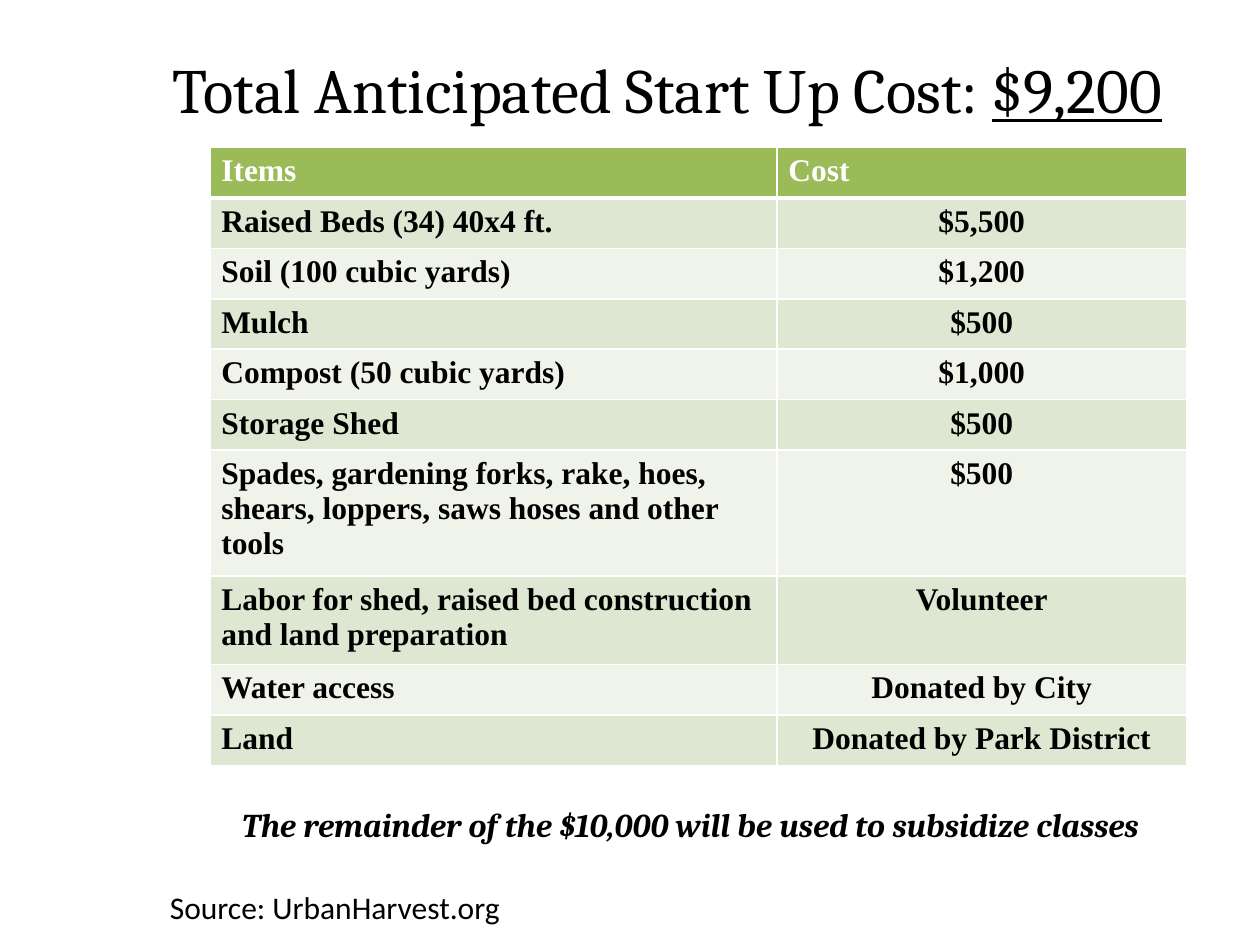
"""Build a slide with a table of start-up costs."""
import pptx
import pptx.dml.color
import pptx.enum.text
import pptx.oxml
import pptx.oxml.ns
import pptx.util

SLIDE_WIDTH, SLIDE_HEIGHT = 10, 7.5
COLORS = {"text": "000000", "header": "9BBB59", "white": "FFFFFF",
          "odd": "DEE7D1", "even": "EFF3EA"}
TITLE = [("Total Anticipated Start Up Cost: ", False), ("$9,200", True)]
HEADER = ("Items", "Cost")
COSTS = [
    ("Raised Beds (34) 40x4 ft.", "$5,500"),
    ("Soil (100 cubic yards)", "$1,200"),
    ("Mulch", "$500"),
    ("Compost (50 cubic yards)", "$1,000"),
    ("Storage Shed", "$500"),
    ("Spades, gardening forks, rake, hoes, shears, loppers, saws hoses and other tools", "$500"),
    ("Labor for shed, raised bed construction and land preparation", "Volunteer"),
    ("Water access", "Donated by City"),
    ("Land", "Donated by Park District"),
]
REMAINDER = "The remainder of the $10,000 will be used to subsidize classes"
SOURCE = "Source: UrbanHarvest.org"
COLUMN_WIDTHS = (4.5, 3.25)
ROW_HEIGHT = 0.4
TALL_ROWS = {6: 0.75, 7: 0.7}
TABLE_LEFT, TABLE_TOP, TABLE_HEIGHT = SLIDE_WIDTH / 6, 1.17, 4.87
TABLE_WIDTH = sum(COLUMN_WIDTHS)
ALIGN = pptx.enum.text.PP_ALIGN


def color(name):
    return pptx.dml.color.RGBColor.from_string(COLORS[name])


def inches(*values):
    return [pptx.util.Inches(value) for value in values]


def write(paragraph, text, *, font, size=18, fill="text", bold=False,
          italic=False, underline=None, align=None):
    paragraph.alignment = align
    run = paragraph.add_run()
    run.text = text
    run.font.name = font
    run.font.size = pptx.util.Pt(size)
    run.font.bold = bold
    run.font.italic = italic
    run.font.underline = underline
    run.font.color.rgb = color(fill)


def add_text(slide, box, text, **style):
    shape = slide.shapes.add_textbox(*inches(*box))
    shape.text_frame.word_wrap = True
    shape.text_frame.auto_size = pptx.enum.text.MSO_AUTO_SIZE.SHAPE_TO_FIT_TEXT
    write(shape.text_frame.paragraphs[0], text, **style)
    return shape


def format_cell(cell, fill, bottom):
    properties = cell._tc.get_or_add_tcPr()
    for side, width in (("L", 1), ("R", 1), ("T", 1), ("B", bottom)):
        properties.append(pptx.oxml.parse_xml(
            f'<a:ln{side} {pptx.oxml.ns.nsdecls("a")} w="{pptx.util.Pt(width)}">'
            f'<a:solidFill><a:srgbClr val="{COLORS["white"]}"/></a:solidFill></a:ln{side}>'))
    cell.fill.solid()
    cell.fill.fore_color.rgb = color(fill)
    cell.margin_left, cell.margin_right, cell.margin_top, cell.margin_bottom = inches(
        0.09, 0.09, 0.05, 0.05)


def add_title(slide):
    title = slide.shapes.title
    title.left, title.top, title.width, title.height = inches(0.92, 0.08, 8.75, 1.25)
    title.text_frame.vertical_anchor = pptx.enum.text.MSO_ANCHOR.MIDDLE
    for text, underline in TITLE:
        write(title.text_frame.paragraphs[0], text, font="Cambria", size=36,
              underline=underline, align=ALIGN.CENTER)


def add_cost_table(slide):
    rows = [HEADER, *COSTS]
    box = inches(TABLE_LEFT, TABLE_TOP, TABLE_WIDTH, TABLE_HEIGHT)
    table = slide.shapes.add_table(len(rows), len(HEADER), *box).table
    for column, width in zip(table.columns, COLUMN_WIDTHS):
        column.width = pptx.util.Inches(width)
    for row_index, row in enumerate(rows):
        is_header = row_index == 0
        table.rows[row_index].height = pptx.util.Inches(TALL_ROWS.get(row_index, ROW_HEIGHT))
        fill = "header" if is_header else ("even", "odd")[row_index % 2]
        for column_index, text in enumerate(row):
            cell = table.cell(row_index, column_index)
            format_cell(cell, fill, bottom=3 if is_header else 1)
            centred = column_index == 1 and not is_header
            write(cell.text_frame.paragraphs[0], text, font="Times New Roman", bold=True,
                  fill="white" if is_header else "text",
                  align=ALIGN.CENTER if centred else ALIGN.LEFT)


def main():
    presentation = pptx.Presentation()
    presentation.slide_width, presentation.slide_height = inches(SLIDE_WIDTH, SLIDE_HEIGHT)
    slide = presentation.slides.add_slide(presentation.slide_layouts[5])
    add_title(slide)
    add_text(slide, (SLIDE_WIDTH / 8, 7, SLIDE_WIDTH * 2 / 3, 0.4), SOURCE, font="Calibri")
    add_cost_table(slide)
    remainder = add_text(slide, (TABLE_LEFT, 6.33, TABLE_WIDTH, 0.42), REMAINDER,
                         font="Cambria", size=19, bold=True, italic=True, align=ALIGN.CENTER)
    remainder.text_frame.margin_right = pptx.util.Inches(0.22)
    presentation.save("out.pptx")


if __name__ == "__main__":
    main()
